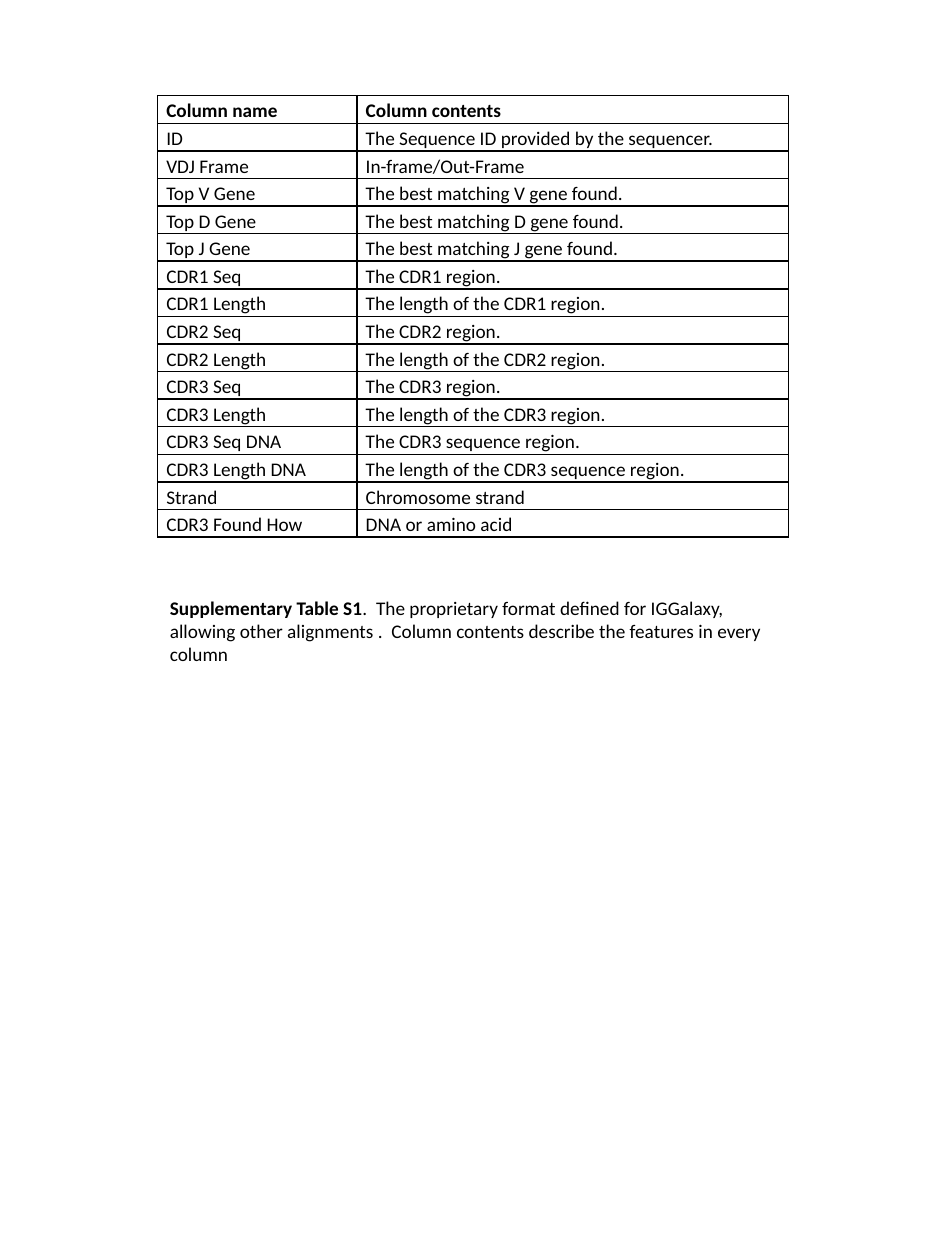
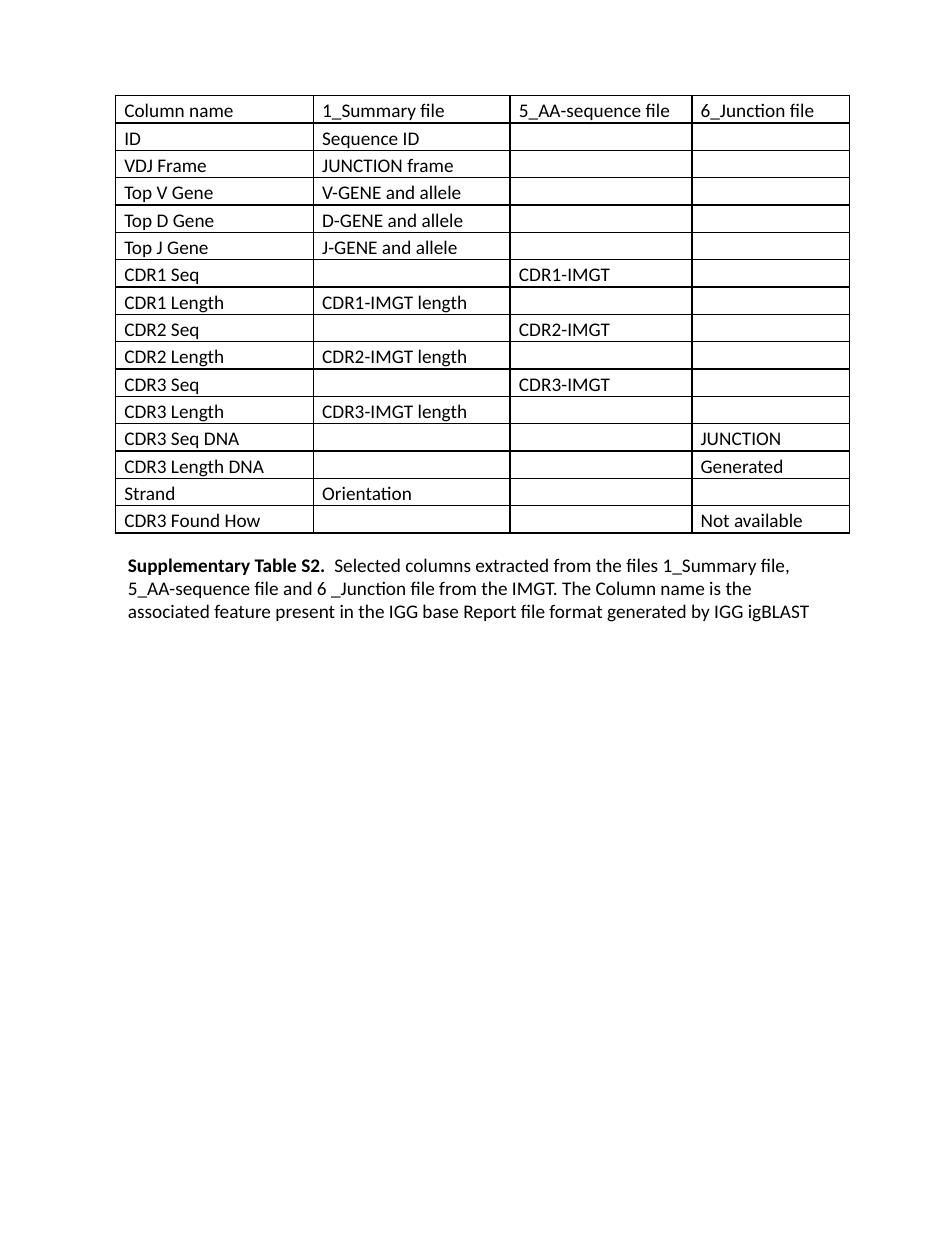
"""Build two pages of supplementary tables, each with a caption."""
from lxml import etree
from pptx import Presentation
from pptx.dml.color import RGBColor
from pptx.enum.text import MSO_ANCHOR, MSO_AUTO_SIZE, PP_ALIGN
from pptx.oxml.ns import qn
from pptx.util import Inches, Pt

BLACK = RGBColor(0, 0, 0)
JUSTIFY = PP_ALIGN.JUSTIFY
MIDDLE, BOTTOM = MSO_ANCHOR.MIDDLE, MSO_ANCHOR.BOTTOM
GROW = MSO_AUTO_SIZE.SHAPE_TO_FIT_TEXT

FEATURES = [
    "ID", "VDJ Frame", "Top V Gene", "Top D Gene", "Top J Gene",
    "CDR1 Seq", "CDR1 Length", "CDR2 Seq", "CDR2 Length",
    "CDR3 Seq", "CDR3 Length", "CDR3 Seq DNA", "CDR3 Length DNA",
    "Strand", "CDR3 Found How",
]
CONTENTS = [
    "The Sequence ID provided by the sequencer.",
    "In-frame/Out-Frame",
    "The best matching V gene found.",
    "The best matching D gene found.",
    "The best matching J gene found.",
    "The CDR1 region.",
    "The length of the CDR1 region.",
    "The CDR2 region.",
    "The length of the CDR2 region.",
    "The CDR3 region.",
    "The length of the CDR3 region.",
    "The CDR3 sequence region.",
    "The length of the CDR3 sequence region.",
    "Chromosome strand",
    "DNA or amino acid",
]
FILES = ["1_Summary file", "5_AA-sequence file", "6_Junction file"]
SUMMARY, SEQUENCE, JUNCTION = range(3)
SOURCES = [
    (SUMMARY, "Sequence ID"),
    (SUMMARY, "JUNCTION frame"),
    (SUMMARY, "V-GENE and allele"),
    (SUMMARY, "D-GENE and allele"),
    (SUMMARY, "J-GENE and allele"),
    (SEQUENCE, "CDR1-IMGT"),
    (SUMMARY, "CDR1-IMGT length"),
    (SEQUENCE, "CDR2-IMGT"),
    (SUMMARY, "CDR2-IMGT length"),
    (SEQUENCE, "CDR3-IMGT"),
    (SUMMARY, "CDR3-IMGT length"),
    (JUNCTION, "JUNCTION"),
    (JUNCTION, "Generated"),
    (SUMMARY, "Orientation"),
    (JUNCTION, "Not available"),
]


class Report:
    """Hold the style, the 90 by 100 grid and the current page."""

    font_name, font_size, color = "Calibri", Pt(11), BLACK
    line_width, cell_inset, line_spacing = Pt(1), Inches(0.07), 1.15
    table_top = 7.6

    def __init__(self):
        self.deck = Presentation()
        self.deck.slide_width, self.deck.slide_height = Inches(7.5), Inches(10)
        self.page = None

    def columns(self, count):
        return round(self.deck.slide_width * count / 90)

    def rows(self, count):
        return round(self.deck.slide_height * count / 100)

    def add_page(self):
        self.page = self.deck.slides.add_slide(self.deck.slide_layouts[6])

    def style(self, font, bold=None):
        font.name, font.size, font.bold = self.font_name, self.font_size, bold
        font.color.rgb = self.color

    def border(self, cell):
        properties = cell._tc.get_or_add_tcPr()
        for side in ("lnL", "lnR", "lnT", "lnB"):
            line = etree.SubElement(properties, qn(f"a:{side}"), w=str(self.line_width))
            fill = etree.SubElement(line, qn("a:solidFill"))
            etree.SubElement(fill, qn("a:srgbClr"), val=str(self.color))

    def fill_cell(self, cell, text, anchor, bold):
        self.border(cell)
        cell.fill.background()
        cell.vertical_anchor = anchor
        cell.margin_left = cell.margin_right = self.cell_inset
        cell.margin_top = cell.margin_bottom = 0
        para = cell.text_frame.paragraphs[0]
        para.alignment, para.line_spacing = JUSTIFY, self.line_spacing
        self.style(para.font, bold)
        if text:
            para.text = text
        else:
            size = str(round(self.font_size.pt * 100))
            etree.SubElement(para._p, qn("a:endParaRPr"), sz=size)

    def table(self, left, widths, row_height, records, anchor, bold_header=False):
        frame = self.page.shapes.add_table(
            len(records), len(widths), self.columns(left), self.rows(self.table_top),
            self.columns(sum(widths)), self.rows(row_height * len(records)))
        table = frame.table
        table.first_row = table.horz_banding = False
        for column, width in zip(table.columns, widths):
            column.width = self.columns(width)
        for index, (row, record) in enumerate(zip(table.rows, records)):
            row.height = self.rows(row_height)
            for cell, text in zip(row.cells, record):
                self.fill_cell(cell, text, anchor, bold_header and index == 0)

    def caption(self, left, top, width, label, text):
        box = self.page.shapes.add_textbox(
            self.columns(left), self.rows(top), self.columns(width), self.rows(6.6))
        box.text_frame.word_wrap = True
        box.text_frame.auto_size = GROW
        para = box.text_frame.paragraphs[0]
        self.style(para.font)
        for content, bold in ((label, True), (text, False)):
            span = para.add_run()
            span.text, span.font.bold = content, bold


def main():
    report = Report()

    report.add_page()
    formats = [("Column name", "Column contents"), *zip(FEATURES, CONTENTS)]
    report.table(15, [19, 41.1], 2.19, formats, MIDDLE, bold_header=True)
    report.caption(
        15, 46.8, 60, "Supplementary Table S1",
        ".  The proprietary format defined for IGGalaxy, allowing other alignments ."
        "  Column contents describe the features in every column")

    report.add_page()
    extracts = [["Column name", *FILES]]
    for feature, (file, source) in zip(FEATURES, SOURCES):
        extracts.append([feature, *(source if index == file else "" for index in range(len(FILES)))])
    report.table(11, [18.85, 18.75, 17.3, 15], 2.17, extracts, BOTTOM)
    report.caption(
        11, 43.4, 70, "Supplementary Table S2.",
        "  Selected columns extracted from the files 1_Summary file, 5_AA-sequence file"
        " and 6 _Junction file from the IMGT. The Column name is the associated feature"
        " present in the IGG base Report file format generated by IGG igBLAST")

    report.deck.save("out.pptx")


if __name__ == "__main__":
    main()
